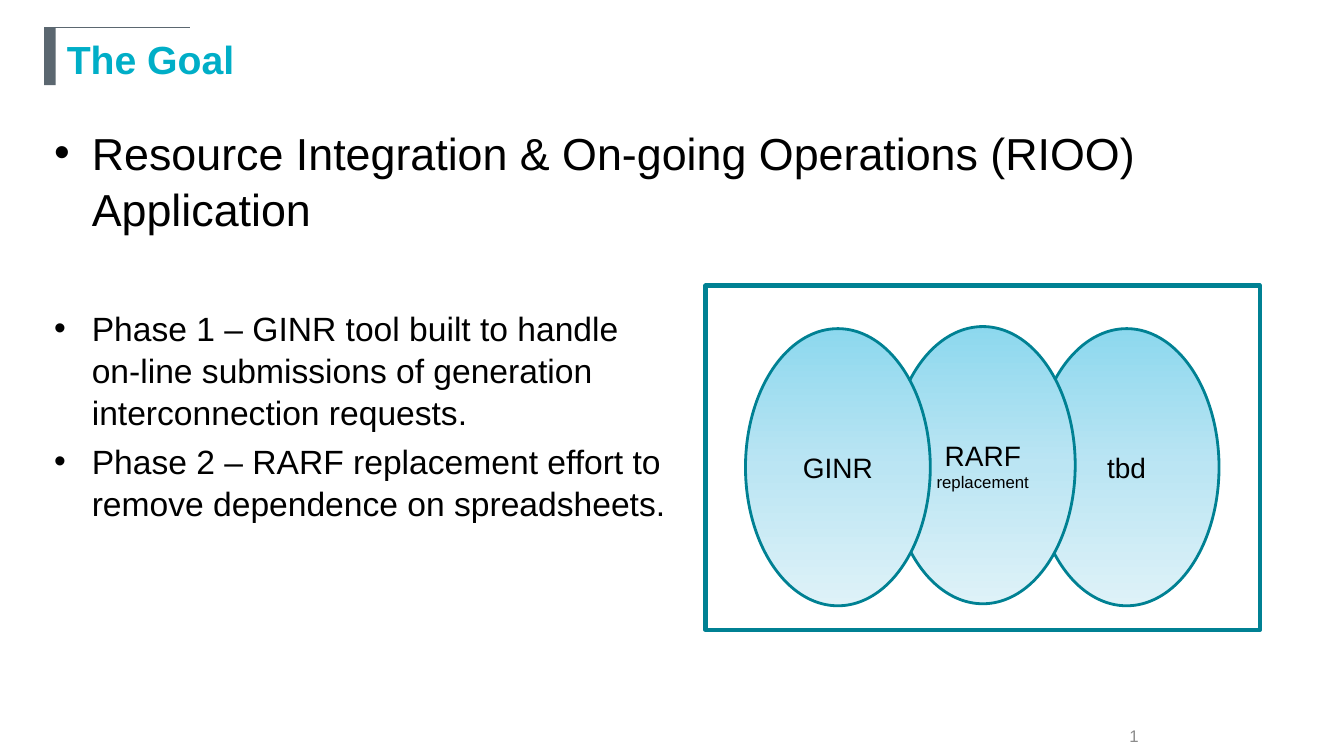
import copy

import pptx
import pptx.dml.color
import pptx.enum.shapes
import pptx.enum.text
import pptx.oxml
import pptx.oxml.ns
import pptx.util

RGBColor = pptx.dml.color.RGBColor
Pt = pptx.util.Pt
MSO_SHAPE = pptx.enum.shapes.MSO_SHAPE
MSO_ANCHOR = pptx.enum.text.MSO_ANCHOR
PP_ALIGN = pptx.enum.text.PP_ALIGN

EMU_PER_PX = 9525
FONT = "Arial"
BLACK = RGBColor(0x00, 0x00, 0x00)
SLATE = RGBColor(0x5B, 0x67, 0x70)
CYAN = RGBColor(0x00, 0xAE, 0xC7)
TEAL = RGBColor(0x00, 0x81, 0x93)
GRAY = RGBColor(0x8C, 0x8C, 0x8C)
GRADIENT = (
    (0, RGBColor(0x8D, 0xD8, 0xEE)),
    (0.5, RGBColor(0xBB, 0xE5, 0xF3)),
    (1, RGBColor(0xDE, 0xF2, 0xF8)),
)

# Text, size and space before, in points
BULLETS = (
    ("Resource Integration & On-going Operations (RIOO) Application", 32, 0),
    ("Phase 1 – GINR tool built to handle\non-line submissions of generation\n"
     "interconnection requests.", 24, 50),
    ("Phase 2 – RARF replacement effort to\nremove dependence on spreadsheets.", 24, 4.8),
)
# Left, top and lines of text, from back to front
PHASES = (
    (985, 313, (("tbd", 20),)),
    (848, 311, (("RARF", 20), ("replacement", 12))),
    (710, 313, (("GINR", 20),)),
)


def px(*lengths):
    return [length * EMU_PER_PX for length in lengths]


def format_runs(paragraph, size, color, bold=False):
    for run in paragraph.runs:
        run.font.name = FONT
        run.font.size = Pt(size)
        run.font.bold = bold
        run.font.color.rgb = color


def write_centered(shape, lines, color):
    frame = shape.text_frame
    frame.word_wrap = True
    frame.vertical_anchor = MSO_ANCHOR.MIDDLE
    frame.text = "\n".join(text for text, _ in lines)
    for paragraph, (_, size) in zip(frame.paragraphs, lines):
        paragraph.alignment = PP_ALIGN.CENTER
        format_runs(paragraph, size, color)


def add_outlined(slide, kind, box, width):
    shape = slide.shapes.add_shape(kind, *px(*box))
    shape.shadow.inherit = False
    shape.fill.background()
    shape.line.color.rgb = TEAL
    shape.line.width = Pt(width)
    return shape


def fill_gradient(shape):
    """Fill from top to bottom with the three gradient colours."""
    shape.fill.gradient()
    shape.fill.gradient_angle = 270
    stop_list = shape.element.spPr.find(".//" + pptx.oxml.ns.qn("a:gsLst"))
    stop_list.insert(1, copy.deepcopy(stop_list[0]))
    for stop, (position, color) in zip(shape.fill.gradient_stops, GRADIENT):
        stop.position = position
        stop.color.rgb = color


def add_title(slide):
    bar = slide.shapes.add_shape(MSO_SHAPE.RECTANGLE, *px(42, 26, 11, 55))
    bar.shadow.inherit = False
    bar.fill.solid()
    bar.fill.fore_color.rgb = SLATE
    bar.line.fill.background()

    rule = slide.shapes.add_connector(
        pptx.enum.shapes.MSO_CONNECTOR.STRAIGHT, *px(42, 26, 181, 26))
    rule.line.color.rgb = SLATE
    rule.line.width = Pt(0.75)
    rule.element.spPr.append(pptx.oxml.parse_xml(
        f"<a:effectLst {pptx.oxml.ns.nsdecls('a')}/>"))

    title = slide.shapes.title
    title.left, title.top, title.width, title.height = px(54, 26, 1184, 60)
    title.text_frame.text = "The Goal"
    title.text_frame.vertical_anchor = MSO_ANCHOR.MIDDLE
    paragraph = title.text_frame.paragraphs[0]
    paragraph.alignment = PP_ALIGN.LEFT
    format_runs(paragraph, 28, CYAN, bold=True)


def add_bullets(slide):
    frame = slide.shapes.add_textbox(*px(42, 112, 1194, 560)).text_frame
    frame.word_wrap = True
    for index, (text, size, space) in enumerate(BULLETS):
        paragraph = frame.add_paragraph() if index else frame.paragraphs[0]
        paragraph.text = text
        paragraph.line_spacing = 1.05
        paragraph.space_before = Pt(space)
        properties = paragraph._p.get_or_add_pPr()
        indent, = px(36)
        properties.set("marL", str(indent))
        properties.set("indent", str(-indent))
        properties.append(pptx.oxml.parse_xml(
            f'<a:buFont {pptx.oxml.ns.nsdecls("a")} typeface="{FONT}"/>'))
        properties.append(pptx.oxml.parse_xml(
            f'<a:buChar {pptx.oxml.ns.nsdecls("a")} char="•"/>'))
        format_runs(paragraph, size, BLACK)


def add_phase_diagram(slide):
    for left, top, lines in PHASES:
        ellipse = add_outlined(slide, MSO_SHAPE.OVAL, (left, top, 176, 264), 2)
        fill_gradient(ellipse)
        write_centered(ellipse, lines, BLACK)
    add_outlined(slide, MSO_SHAPE.RECTANGLE, (672, 272, 528, 328), 3)


def main():
    presentation = pptx.Presentation()
    presentation.slide_width, presentation.slide_height = px(1280, 720)
    slide = presentation.slides.add_slide(presentation.slide_layouts[5])
    add_title(slide)
    add_bullets(slide)
    number = slide.shapes.add_textbox(*px(1048, 685, 64, 31))
    write_centered(number, (("1", 12),), GRAY)
    add_phase_diagram(slide)
    presentation.save("out.pptx")


if __name__ == "__main__":
    main()
